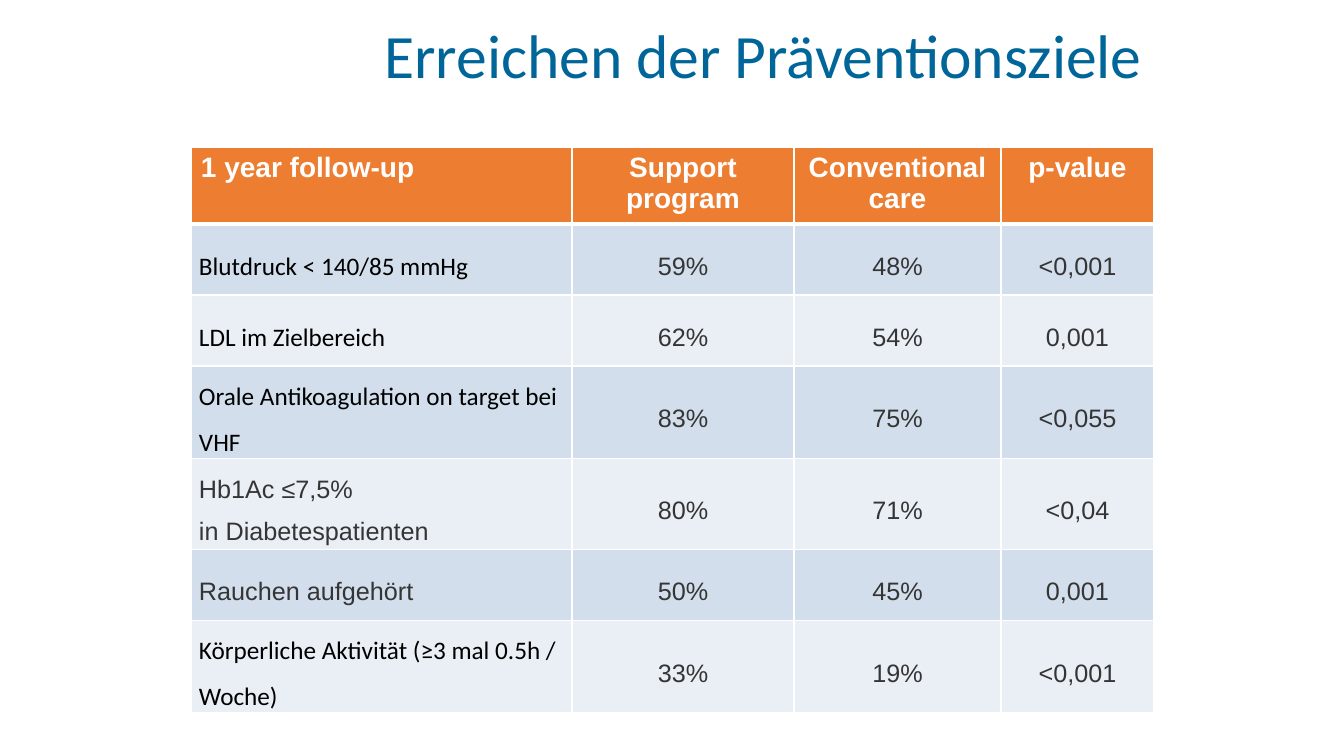
from lxml.etree import SubElement
from pptx import Presentation
from pptx.dml.color import RGBColor
from pptx.enum.text import MSO_ANCHOR, MSO_AUTO_SIZE, PP_ALIGN
from pptx.oxml.ns import qn
from pptx.util import Pt

# Content
TITLE = "Erreichen der Präventionsziele"
HEAD = ["1 year follow-up", "Support program", "Conventional care", "p-value"]
# Label font, then the cells of the row
ROWS = [
    ("Calibri", ["Blutdruck < 140/85 mmHg", "59%", "48%", "<0,001"]),
    ("Calibri", ["LDL im Zielbereich", "62%", "54%", "0,001"]),
    ("Calibri", ["Orale Antikoagulation on target bei VHF", "83%", "75%", "<0,055"]),
    ("Arial", ["Hb1Ac ≤7,5%\nin Diabetespatienten", "80%", "71%", "<0,04"]),
    ("Arial", ["Rauchen aufgehört", "50%", "45%", "0,001"]),
    ("Calibri", ["Körperliche Aktivität (≥3 mal 0.5h / Woche)", "33%", "19%", "<0,001"]),
]
WIDTHS = [381, 222, 207, 153]
HEIGHTS = [77, 71, 71, 91, 91, 71, 91]
BANDS = ["D3DEEC", "EAEFF6"]
INK = {"Calibri": "000000", "Arial": "353535"}


def px(n):
    return round(n * 914400 / 100.8)


def color(code):
    return RGBColor.from_string(code)


def style(para, font, size, ink, align, bold=False, space=1.0):
    para.font.name = font
    para.font.size = Pt(size)
    para.font.bold = bold
    para.font.color.rgb = color(ink)
    para.alignment = align
    para.line_spacing = space


def edge(cell, sides):
    """Draw white borders; sides maps a side letter to its width in points."""
    props = cell._tc.get_or_add_tcPr()
    for spot, (side, width) in enumerate(sides.items()):
        line = SubElement(props, qn(f"a:ln{side}"), w=str(Pt(width)))
        fill = SubElement(line, qn("a:solidFill"))
        SubElement(fill, qn("a:srgbClr"), val="FFFFFF")
        props.insert(spot, line)


def fill_cell(cell, text, fill, pad, anchor):
    cell.text = text
    cell.fill.solid()
    cell.fill.fore_color.rgb = color(fill)
    cell.margin_left = cell.margin_right = px(pad[0])
    cell.margin_top = cell.margin_bottom = px(pad[1])
    cell.vertical_anchor = anchor


deck = Presentation()
deck.slide_width, deck.slide_height = px(1344), px(756)
slide = deck.slides.add_slide(deck.slide_layouts[5])

# Title
title = slide.shapes.title
title.left, title.top, title.width, title.height = map(px, (310, 20, 907, 126))
frame = title.text_frame
frame.text = TITLE
frame.word_wrap = True
frame.auto_size = MSO_AUTO_SIZE.NONE
frame.vertical_anchor = MSO_ANCHOR.TOP
style(frame.paragraphs[0], "Calibri", 44, "006699", PP_ALIGN.CENTER, space=0.9)

# Table grid
table = slide.shapes.add_table(
    len(HEIGHTS), len(WIDTHS), px(191), px(147), px(sum(WIDTHS)), px(sum(HEIGHTS))
).table
for col, width in zip(table.columns, WIDTHS):
    col.width = px(width)
for row, height in zip(table.rows, HEIGHTS):
    row.height = px(height)

# Header row
for c, text in enumerate(HEAD):
    cell = table.cell(0, c)
    fill_cell(cell, text, "ED7D31", (10, 5), MSO_ANCHOR.TOP)
    align = PP_ALIGN.CENTER if c else PP_ALIGN.LEFT
    style(cell.text_frame.paragraphs[0], "Arial", 20, "FFFFFF", align, bold=True)
    edge(cell, {"L": 1, "R": 1, "T": 1, "B": 3})

# Body rows
for r, (face, texts) in enumerate(ROWS, 1):
    for c, text in enumerate(texts):
        cell = table.cell(r, c)
        fill_cell(cell, text, BANDS[(r - 1) % 2], (8, 0), MSO_ANCHOR.MIDDLE)
        font = "Arial" if c else face
        align = PP_ALIGN.CENTER if c else PP_ALIGN.LEFT
        for para in cell.text_frame.paragraphs:
            style(para, font, 18, INK[font], align, space=1.5)
        edge(cell, {"L": 1, "R": 1, "T": 3 if r == 1 else 1, "B": 1})

deck.save("out.pptx")
